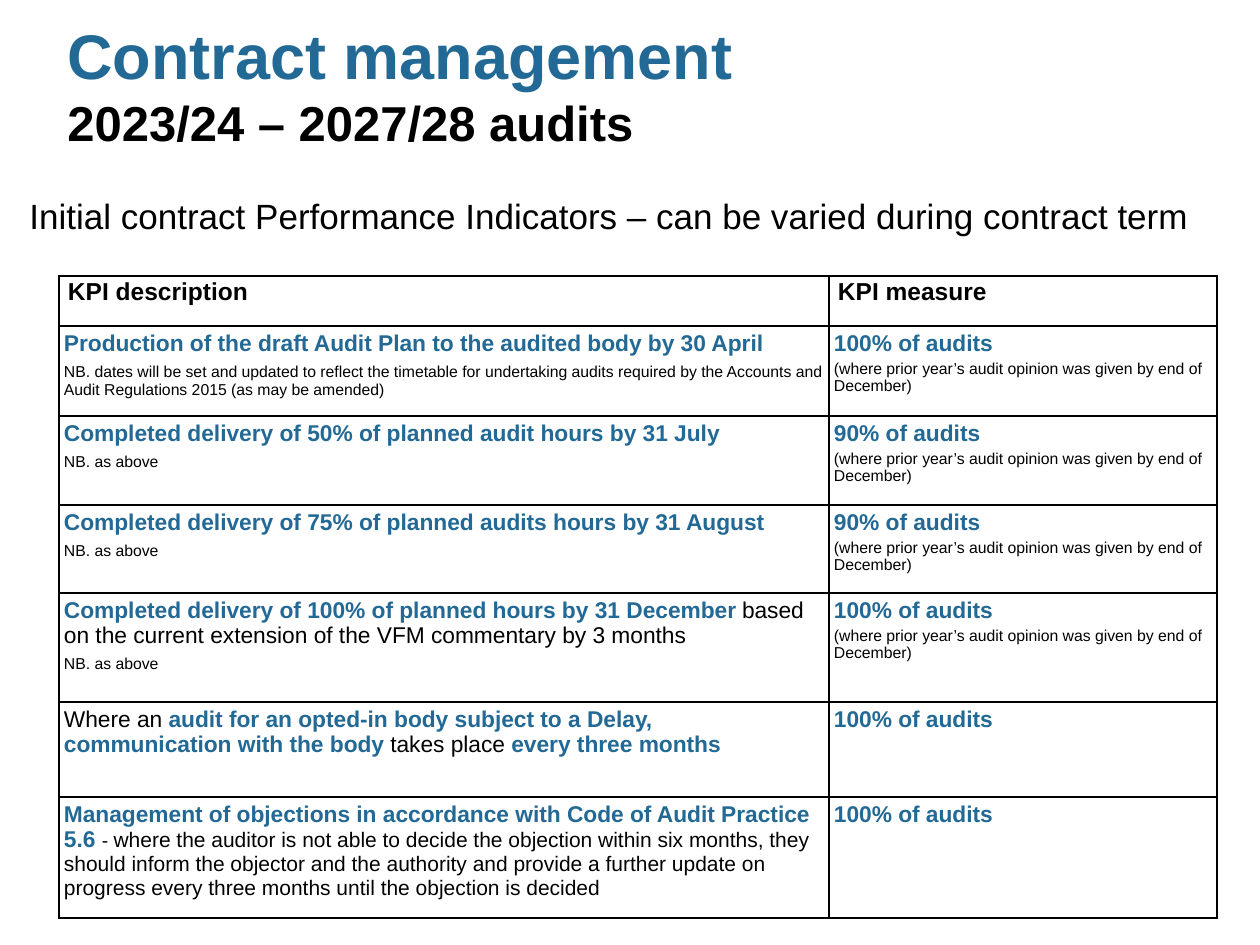
import pptx
import pptx.dml.color
import pptx.enum.text
import pptx.oxml.ns
import pptx.util
from lxml import etree

EMU_PER_PX = 914400 / 126
FONT = "Arial"
BLUE, BLACK, WHITE = "236995", "000000", "FFFFFF"

COLUMN_WIDTHS = [770, 388]
ROW_HEIGHTS = [50, 90, 89, 88, 109, 95, 121]
OPINION_NOTE = "(where prior year’s audit opinion was given by end of December)"
AS_ABOVE = "NB. as above"


def px(length):
    return pptx.util.Emu(round(length * EMU_PER_PX))


def color(hex_string):
    return pptx.dml.color.RGBColor.from_string(hex_string)


def key(text):
    return text, 13, BLUE, True


def plain(text, size=13):
    return text, size, BLACK, False


# Each row: description paragraphs, share of audits, whether the note applies.
KPIS = [
    ([[key("Production of the draft Audit Plan to the audited body by 30 April")],
      [plain("NB. dates will be set and updated to reflect the timetable for undertaking "
             "audits required by the Accounts and Audit Regulations 2015 "
             "(as may be amended)", 9)]], "100%", True),
    ([[key("Completed delivery of 50% of planned audit hours by 31 July")],
      [plain(AS_ABOVE, 9)]], "90%", True),
    ([[key("Completed delivery of 75% of planned audits hours by 31 August")],
      [plain(AS_ABOVE, 9)]], "90%", True),
    ([[key("Completed delivery of 100% of planned hours by 31 December "),
       plain("based on the current extension of the VFM commentary by 3 months")],
      [plain(AS_ABOVE, 9)]], "100%", True),
    ([[plain("Where an "),
       key("audit for an opted-in body subject to a Delay, communication with the body "),
       plain("takes place "), key("every three months")]], "100%", False),
    ([[key("Management of objections in accordance with Code of Audit Practice 5.6 "),
       plain("- ", 11),
       plain("where the auditor is not able to decide the objection within six months, "
             "they should inform the objector and the authority and provide a further "
             "update on progress every three months until the objection is decided", 12)]],
     "100%", False),
]


def style_font(font, size, hex_string, bold):
    font.name = FONT
    font.size = pptx.util.Pt(size)
    font.bold = bold
    font.color.rgb = color(hex_string)


def write_paragraph(paragraph, runs):
    if len(runs) == 1:
        text, *style = runs[0]
        paragraph.add_run().text = text
        style_font(paragraph.font, *style)
        return
    for text, *style in runs:
        run = paragraph.add_run()
        run.text = text
        style_font(run.font, *style)


def add_text_box(slide, left, top, width, height):
    frame = slide.shapes.add_textbox(px(left), px(top), px(width), px(height)).text_frame
    frame.word_wrap = True
    frame.vertical_anchor = pptx.enum.text.MSO_ANCHOR.MIDDLE
    return frame.paragraphs[0]


def add_title(slide):
    title = add_text_box(slide, 55, 5, 1134, 158)
    write_paragraph(title, [("Contract management", 36, BLUE, True)])
    style_font(title.runs[0].font, 36, BLUE, True)
    title.add_line_break()
    years = title.add_run()
    years.text = "2023/24 – 2027/28 audits"
    style_font(years.font, 28, BLACK, True)


def set_borders(cell):
    properties = cell._tc.get_or_add_tcPr()
    for side in ("lnL", "lnR", "lnT", "lnB"):
        line = etree.SubElement(properties, pptx.oxml.ns.qn(f"a:{side}"), w="12700")
        fill = etree.SubElement(line, pptx.oxml.ns.qn("a:solidFill"))
        etree.SubElement(fill, pptx.oxml.ns.qn("a:srgbClr"), val=BLACK)


def set_margins(cell, side, top):
    cell.margin_left = cell.margin_right = px(side)
    cell.margin_top = cell.margin_bottom = px(top)


def fill_header(cell, text):
    set_margins(cell, 9, 0)
    set_borders(cell)
    cell.fill.background()
    heading = cell.text_frame.paragraphs[0]
    write_paragraph(heading, [(text, 14, BLACK, True)])
    heading.line_spacing = 1.07
    heading.space_after = pptx.util.Pt(12)


def fill_cell(cell, paragraphs, space_after):
    set_margins(cell, 5, 5)
    set_borders(cell)
    cell.fill.solid()
    cell.fill.fore_color.rgb = color(WHITE)
    frame = cell.text_frame
    for index, runs in enumerate(paragraphs):
        paragraph = frame.add_paragraph() if index else frame.paragraphs[0]
        write_paragraph(paragraph, runs)
        paragraph.space_before = pptx.util.Pt(2 if index else 0)
        paragraph.space_after = pptx.util.Pt(space_after[index])


def add_kpi_table(slide):
    table = slide.shapes.add_table(
        len(ROW_HEIGHTS), len(COLUMN_WIDTHS), px(59), px(276),
        px(sum(COLUMN_WIDTHS)), px(sum(ROW_HEIGHTS))).table
    table.first_row = table.horz_banding = False
    for column, width in zip(table.columns, COLUMN_WIDTHS):
        column.width = px(width)
    for row, height in zip(table.rows, ROW_HEIGHTS):
        row.height = px(height)

    for column, heading in enumerate(["KPI description", "KPI measure"]):
        fill_header(table.cell(0, column), heading)
    for row, (description, share, has_note) in enumerate(KPIS, start=1):
        measure = [[key(f"{share} of audits")]]
        if has_note:
            measure.append([plain(OPINION_NOTE, 9)])
        fill_cell(table.cell(row, 0), description, (2, 2))
        fill_cell(table.cell(row, 1), measure, (0, 6))


def main():
    deck = pptx.Presentation()
    deck.slide_width, deck.slide_height = px(1260), px(945)
    slide = deck.slides.add_slide(deck.slide_layouts[6])
    add_title(slide)
    add_kpi_table(slide)
    subtitle = add_text_box(slide, 17, 185, 1201, 62)
    write_paragraph(subtitle, [plain("Initial contract Performance Indicators – "
                                     "can be varied during contract term", 20)])
    deck.save("out.pptx")


if __name__ == "__main__":
    main()
